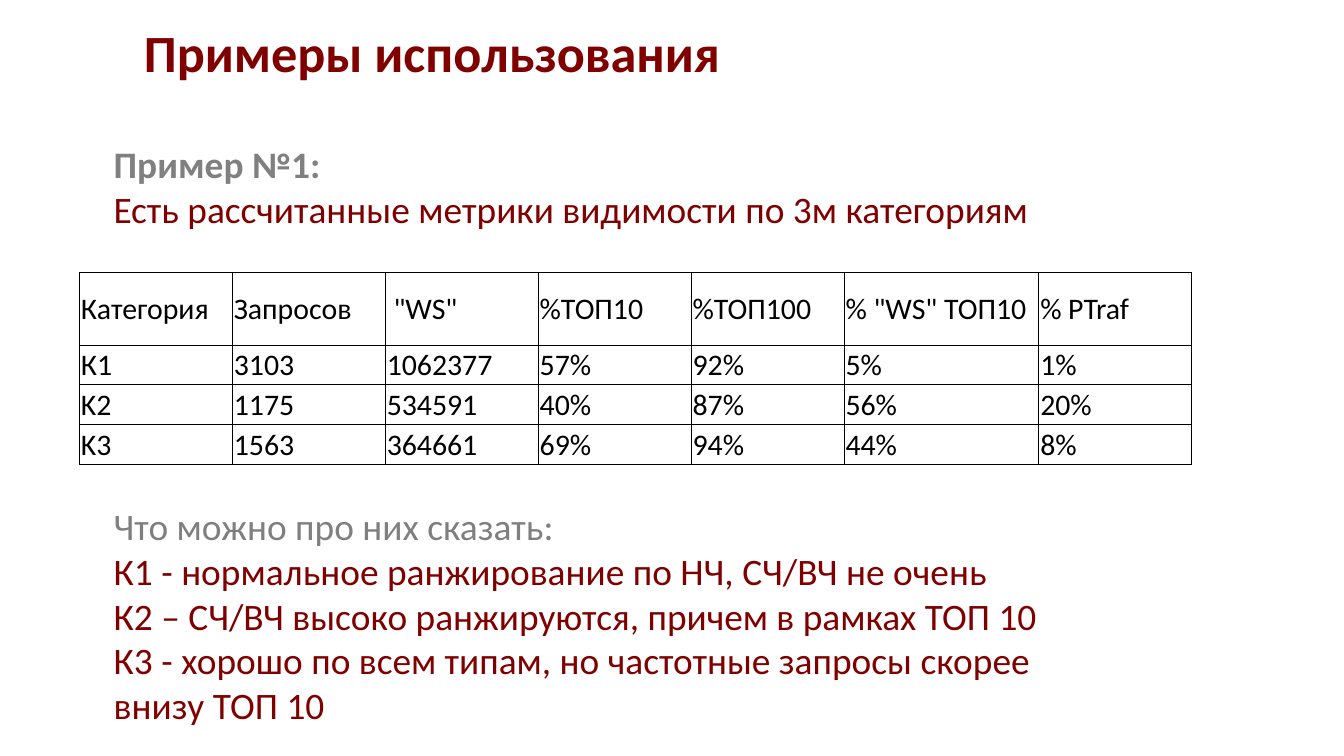
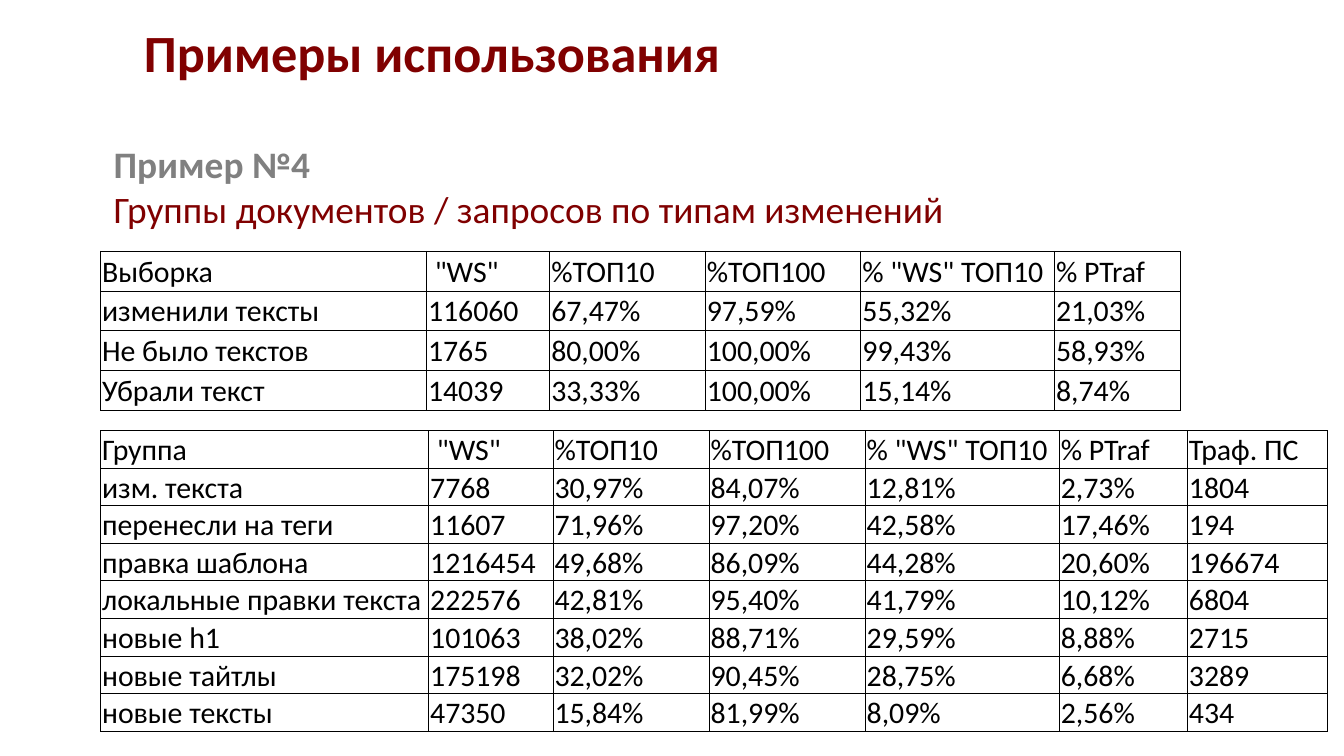
from dataclasses import dataclass

from lxml import etree
from pptx import Presentation
from pptx.dml.color import RGBColor
from pptx.enum.text import MSO_ANCHOR, MSO_AUTO_SIZE, PP_ALIGN
from pptx.oxml.ns import qn
from pptx.util import Cm, Pt

MIDDLE = MSO_ANCHOR.MIDDLE
NO_AUTOFIT = MSO_AUTO_SIZE.NONE
LEFT = PP_ALIGN.LEFT
TITLE_ONLY = 5


@dataclass(frozen=True)
class Theme:
    font: str = "Calibri"
    accent: str = "800000"
    heading: str = "808080"
    question: str = "7F7F7F"
    ink: str = "000000"
    title_size: int = 28
    body_size: int = 20
    table_size: int = 16
    border: float = 0.5


THEME = Theme()

# Content; lengths in centimetres
TITLE = "Примеры использования"
METRICS = [' "WS"', "%ТОП10", "%ТОП100", '% "WS" ТОП10', "% PTraf"]

SLIDES = [
    {
        "heading": "Пример №1:",
        "statement": "Есть рассчитанные метрики видимости по 3м категориям",
        "question": "Что можно про них сказать:",
        "answers": [
            "К1 - нормальное ранжирование по НЧ, СЧ/ВЧ не очень",
            "К2 – СЧ/ВЧ высоко ранжируются, причем в рамках ТОП 10",
            "К3 - хорошо по всем типам, но частотные запросы скорее внизу ТОП 10",
        ],
        "body_height": 11.38,
        "tables": [
            {
                "left": 1.5, "top": 5.15,
                "widths": [2.89] * 5 + [3.68, 2.89],
                "heights": [1.37] + [0.75] * 3,
                "rows": [
                    ["Категория", "Запросов"] + METRICS,
                    ["К1", "3103", "1062377", "57%", "92%", "5%", "1%"],
                    ["K2", "1175", "534591", "40%", "87%", "56%", "20%"],
                    ["K3", "1563", "364661", "69%", "94%", "44%", "8%"],
                ],
            },
        ],
    },
    {
        "heading": "Пример №4",
        "statement": "Группы документов / запросов по типам изменений",
        "question": None,
        "answers": [],
        "body_height": 7.95,
        "tables": [
            {
                "left": 1.9, "top": 4.75,
                "widths": [6.16, 2.33, 2.94, 2.94, 3.66, 2.38],
                "heights": [0.75] * 4,
                "rows": [
                    ["Выборка"] + METRICS,
                    ["изменили тексты", "116060", "67,47%", "97,59%", "55,32%", "21,03%"],
                    ["Не было текстов", "1765", "80,00%", "100,00%", "99,43%", "58,93%"],
                    ["Убрали текст", "14039", "33,33%", "100,00%", "15,14%", "8,74%"],
                ],
            },
            {
                "left": 1.9, "top": 8.14,
                "widths": [6.2, 2.35, 2.95, 2.95, 3.67, 2.42, 2.65],
                "heights": [0.71] * 8,
                "rows": [
                    ["Группа"] + METRICS + ["Траф. ПС"],
                    ["изм. текста", "7768", "30,97%", "84,07%", "12,81%", "2,73%", "1804"],
                    ["перенесли на теги", "11607", "71,96%", "97,20%", "42,58%", "17,46%", "194"],
                    ["правка шаблона", "1216454", "49,68%", "86,09%", "44,28%", "20,60%", "196674"],
                    ["локальные правки текста", "222576", "42,81%", "95,40%", "41,79%", "10,12%", "6804"],
                    ["новые h1", "101063", "38,02%", "88,71%", "29,59%", "8,88%", "2715"],
                    ["новые тайтлы", "175198", "32,02%", "90,45%", "28,75%", "6,68%", "3289"],
                    ["новые тексты", "47350", "15,84%", "81,99%", "8,09%", "2,56%", "434"],
                ],
            },
        ],
    },
]


def set_font(font, size, color, bold=False):
    font.name = THEME.font
    font.size = Pt(size)
    font.bold = bold
    font.color.rgb = RGBColor.from_string(color)


def set_margins(target, left, top, right, bottom):
    target.margin_left, target.margin_top = Cm(left), Cm(top)
    target.margin_right, target.margin_bottom = Cm(right), Cm(bottom)


def add_title(slide):
    title = slide.shapes.title
    title.left, title.top, title.width, title.height = Cm(0), Cm(0.89), Cm(17.1), Cm(0.74)
    frame = title.text_frame
    frame.auto_size = NO_AUTOFIT
    frame.vertical_anchor = MIDDLE
    set_margins(frame, 2.72, 0, 0, 0)
    paragraph = frame.paragraphs[0]
    paragraph.text = TITLE
    paragraph.alignment = LEFT
    paragraph.line_spacing = Pt(18)
    set_font(paragraph.font, THEME.title_size, THEME.accent, bold=True)


def add_body(slide, content):
    box = slide.shapes.add_textbox(Cm(1.9), Cm(2.54), Cm(19.4), Cm(content["body_height"]))
    frame = box.text_frame
    frame.word_wrap = True

    # Heading and statement share one paragraph
    paragraph = frame.paragraphs[0]
    heading = paragraph.add_run()
    heading.text = content["heading"]
    set_font(heading.font, THEME.body_size, THEME.heading, bold=True)
    paragraph.add_line_break()
    statement = paragraph.add_run()
    statement.text = content["statement"]
    set_font(statement.font, THEME.body_size, THEME.accent)

    # Conclusions sit below the table
    if content["question"]:
        paragraph = frame.add_paragraph()
        paragraph.text = content["question"]
        paragraph.space_before = Pt(146)
        set_font(paragraph.font, THEME.body_size, THEME.question)
    for answer in content["answers"]:
        paragraph = frame.add_paragraph()
        paragraph.text = answer
        set_font(paragraph.font, THEME.body_size, THEME.accent)


def add_borders(cell):
    properties = cell._tc.get_or_add_tcPr()
    for side in ("a:lnL", "a:lnR", "a:lnT", "a:lnB"):
        line = etree.SubElement(properties, qn(side), w=str(Pt(THEME.border)))
        fill = etree.SubElement(line, qn("a:solidFill"))
        etree.SubElement(fill, qn("a:srgbClr"), val=THEME.ink)


def add_metrics_table(slide, data):
    rows, widths, heights = data["rows"], data["widths"], data["heights"]
    table = slide.shapes.add_table(
        len(rows), len(widths), Cm(data["left"]), Cm(data["top"]),
        Cm(sum(widths)), Cm(sum(heights))).table
    table.first_row = False
    table.horz_banding = False
    for column, width in zip(table.columns, widths):
        column.width = Cm(width)
    for row, height, values in zip(table.rows, heights, rows):
        row.height = Cm(height)
        for cell, value in zip(row.cells, values):
            cell.text = value
            cell.vertical_anchor = MIDDLE
            set_margins(cell, 0.03, 0.03, 0.03, 0)
            add_borders(cell)
            cell.fill.background()
            set_font(cell.text_frame.paragraphs[0].font, THEME.table_size, THEME.ink)


def main():
    presentation = Presentation()
    presentation.slide_width, presentation.slide_height = Cm(25.4), Cm(14.29)
    for content in SLIDES:
        slide = presentation.slides.add_slide(presentation.slide_layouts[TITLE_ONLY])
        add_title(slide)
        add_body(slide, content)
        for data in content["tables"]:
            add_metrics_table(slide, data)
    presentation.save("out.pptx")


if __name__ == "__main__":
    main()
